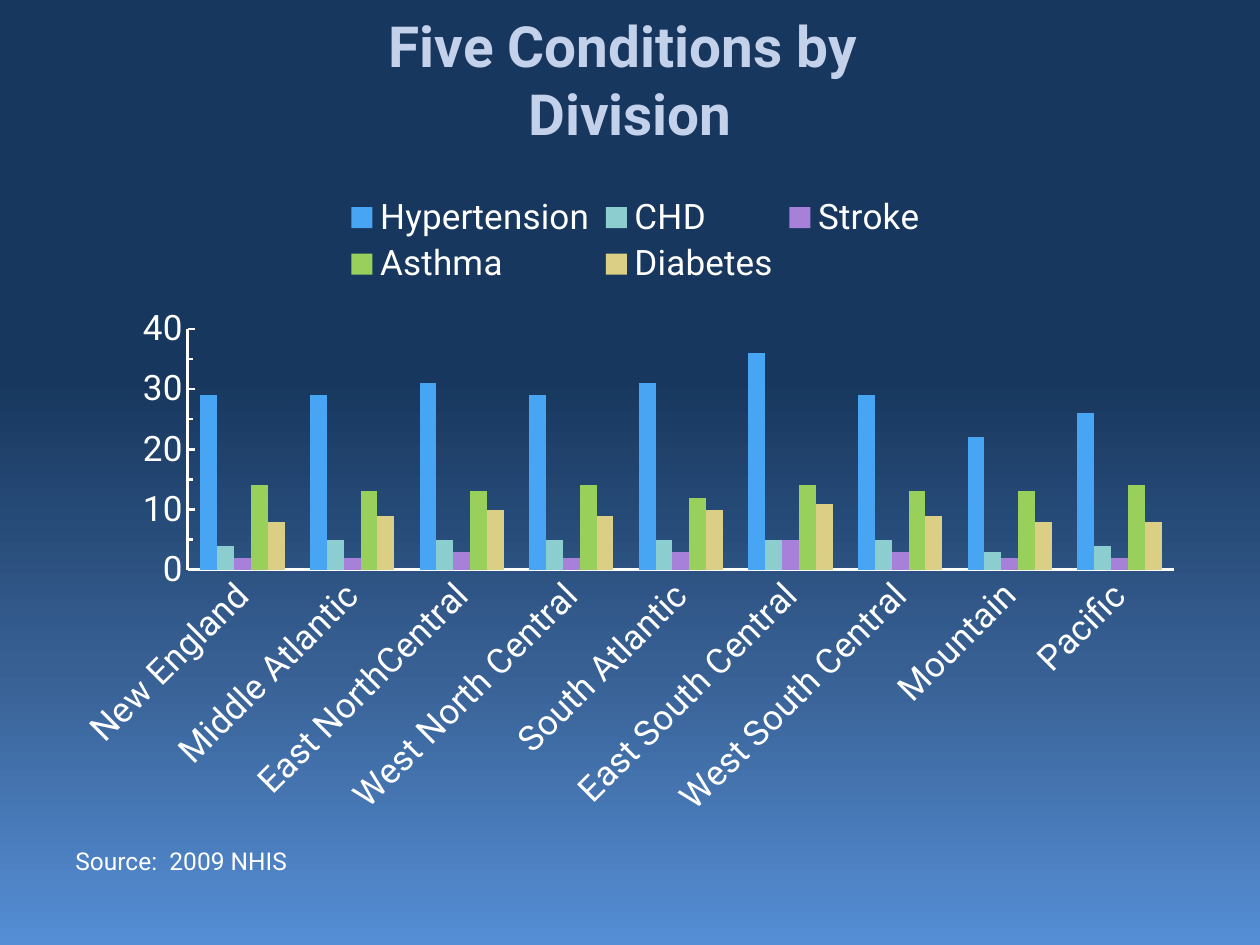
from lxml import etree
from pptx import Presentation
from pptx.chart.data import CategoryChartData
from pptx.dml.color import RGBColor
from pptx.enum import chart as kinds, text
from pptx.oxml.ns import qn
from pptx.util import Cm, Pt

FONT = "Roboto"
WHITE = "FFFFFF"
STOPS = [(0, "17375E"), (40, "17375E"), (70, "375F92"), (100, "558ED5")]
AREAS = ["New England", "Middle Atlantic", "East NorthCentral",
         "West North Central", "South Atlantic", "East South Central",
         "West South Central", "Mountain", "Pacific"]
SERIES = [
    ("Hypertension", "47A5F3", [29, 29, 31, 29, 31, 36, 29, 22, 26]),
    ("CHD", "8CCDCF", [4, 5, 5, 5, 5, 5, 5, 3, 4]),
    ("Stroke", "A780DA", [2, 2, 3, 2, 3, 5, 3, 2, 2]),
    ("Asthma", "99D05C", [14, 13, 13, 14, 12, 14, 13, 13, 14]),
    ("Diabetes", "DBCF85", [8, 9, 10, 9, 10, 11, 9, 8, 8]),
]


def color(code):
    return RGBColor.from_string(code)


def style(font, size, code=WHITE, bold=False):
    font.name = FONT
    font.size = Pt(size)
    font.bold = bold
    font.color.rgb = color(code)


def paint(slide):
    fill = slide.background.fill
    fill.gradient()
    fill.gradient_angle = 270
    stops = slide.element.xpath(".//a:gsLst")[0]
    for old in list(stops):
        stops.remove(old)
    for pos, code in STOPS:
        stop = etree.SubElement(stops, qn("a:gs"), pos=str(pos * 1000))
        etree.SubElement(stop, qn("a:srgbClr"), val=code)


def label(slide, box, words, size, code=WHITE, bold=False,
          align=text.PP_ALIGN.LEFT, anchor=text.MSO_ANCHOR.TOP):
    frame = slide.shapes.add_textbox(*map(Cm, box)).text_frame
    frame.word_wrap = True
    frame.vertical_anchor = anchor
    line = frame.paragraphs[0]
    line.text = words
    line.alignment = align
    style(line.font, size, code, bold)


def place(parent, index, box, inner=False):
    for old in parent.findall(qn("c:layout")):
        parent.remove(old)
    layout = etree.Element(qn("c:layout"))
    parent.insert(index, layout)
    manual = etree.SubElement(layout, qn("c:manualLayout"))
    parts = [("layoutTarget", "inner")] if inner else []
    parts += [("xMode", "edge"), ("yMode", "edge"), *zip("xywh", box)]
    for name, value in parts:
        etree.SubElement(manual, qn("c:" + name), val=str(value))


def rule(axis, tick, minor):
    axis.has_major_gridlines = False
    axis.major_tick_mark = tick
    axis.minor_tick_mark = minor
    axis.format.line.color.rgb = color(WHITE)
    axis.format.line.width = Pt(1.5)
    style(axis.tick_labels.font, 20)


def graph(slide, box):
    data = CategoryChartData()
    data.categories = AREAS
    for name, _, values in SERIES:
        data.add_series(name, values)
    chart = slide.shapes.add_chart(
        kinds.XL_CHART_TYPE.COLUMN_CLUSTERED, *map(Cm, box), data).chart
    chart.has_title = False
    style(chart.font, 18)
    chart.font.name = "Calibri"

    plot = chart.plots[0]
    plot.gap_width = 150
    plot.overlap = 0
    plot.vary_by_categories = False
    for bar, (_, code, _) in zip(plot.series, SERIES):
        bar.format.fill.solid()
        bar.format.fill.fore_color.rgb = color(code)

    mark = kinds.XL_TICK_MARK
    rule(chart.category_axis, mark.NONE, mark.NONE)
    names = chart.category_axis.tick_labels.font
    names.bold = False
    body = chart.category_axis._element.find(qn("c:txPr")).find(qn("a:bodyPr"))
    body.set("rot", "-2700000")
    body.set("vert", "horz")

    scale = chart.value_axis
    rule(scale, mark.INSIDE, mark.INSIDE)
    scale.minimum_scale, scale.maximum_scale = 0, 40
    scale.major_unit, scale.minor_unit = 10, 5

    chart.has_legend = True
    key = chart.legend
    key.position = kinds.XL_LEGEND_POSITION.TOP
    key.include_in_layout = False
    style(key.font, 20)
    root = chart.element
    place(root.xpath(".//c:plotArea")[0], 0, (0.11, 0.23, 0.87, 0.37), True)
    place(root.xpath(".//c:legend")[0], 1, (0.24, 0.02, 0.53, 0.15))


def main():
    deck = Presentation()
    deck.slide_width, deck.slide_height = Cm(25.4), Cm(19.05)
    slide = deck.slides.add_slide(deck.slide_layouts[6])
    paint(slide)
    label(slide, (1.27, 0, 22.86, 3.18), "Five Conditions by \vDivision",
          32.4, "C4D1EB", True, text.PP_ALIGN.CENTER, text.MSO_ANCHOR.MIDDLE)
    graph(slide, (1.27, 3.61, 22.86, 13.13))
    label(slide, (1.27, 16.94, 22.86, 0.64), "Source:  2009 NHIS", 14)
    deck.save("out.pptx")


if __name__ == "__main__":
    main()
